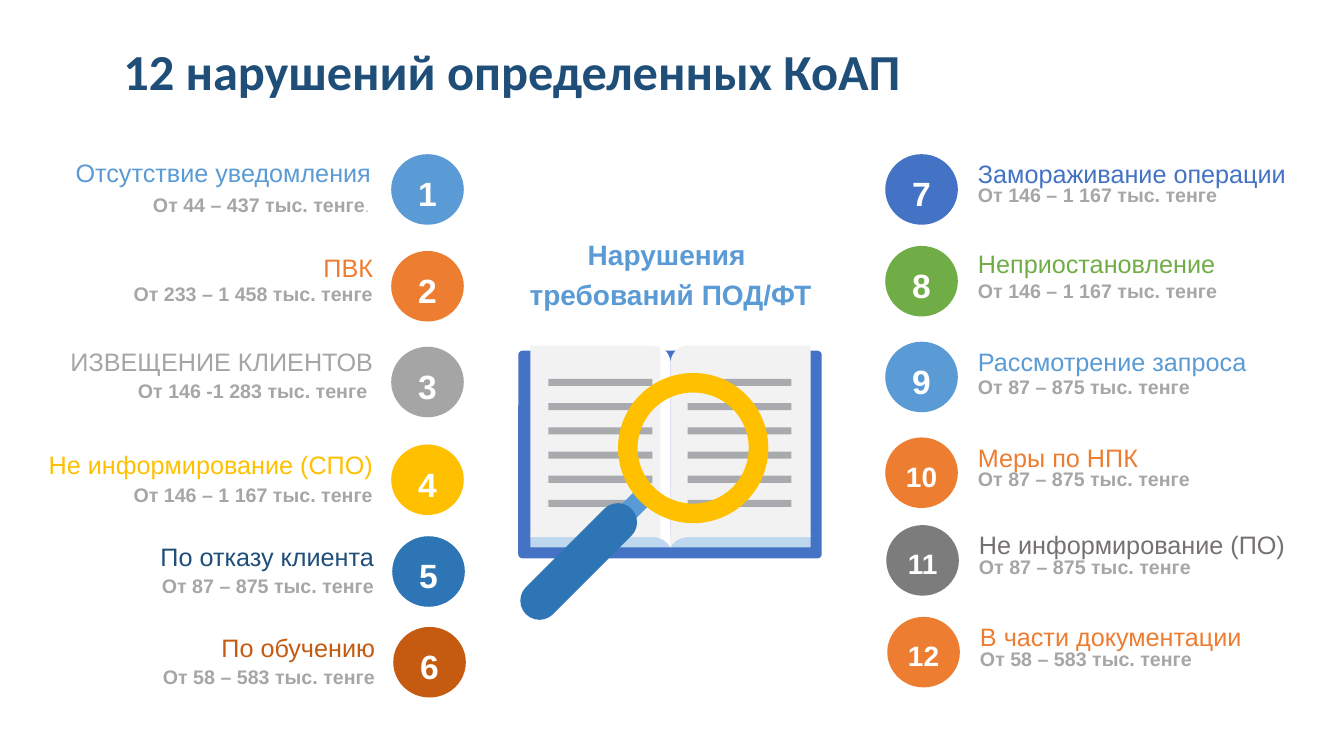
from pptx import Presentation, util as u
from pptx.dml.color import RGBColor
from pptx.enum import shapes, text

# Colours
WHITE, PAPER = RGBColor(255, 255, 255), RGBColor(0xF2, 0xF2, 0xF2)
INDIGO, SKY = RGBColor(0x44, 0x72, 0xC4), RGBColor(0x5B, 0x9B, 0xD5)
BLUE, NAVY = RGBColor(0x2E, 0x75, 0xB6), RGBColor(0x1F, 0x4E, 0x79)
PALE_BLUE, GREEN = RGBColor(0xBD, 0xD7, 0xEE), RGBColor(0x70, 0xAD, 0x47)
ORANGE, RUST = RGBColor(0xED, 0x7D, 0x31), RGBColor(0xC5, 0x5A, 0x11)
GOLD, GREY = RGBColor(0xFF, 0xC0, 0), RGBColor(0xA5, 0xA5, 0xA5)
AMOUNT_GREY, RULE_GREY = RGBColor(0xA6, 0xA6, 0xA6), RGBColor(0xA8, 0xAA, 0xAD)
STONE, DARK_GREY = RGBColor(0x76, 0x71, 0x71), RGBColor(0x7C, 0x7C, 0x7C)

# Content: violation, fine, text colour, badge colour, tops of badge, violation and fine
HEADING = "12 нарушений определенных КоАП"
CENTRE = ["Нарушения ", "требований ПОД/ФТ"]
LEFT = [
    ("Отсутствие уведомления", "От 44 – 437 тыс. тенге", SKY, SKY, 1.53, 1.5, 1.87),
    ("ПВК", "От 233 – 1 458 тыс. тенге", ORANGE, ORANGE, 2.49, 2.44, 2.75),
    ("ИЗВЕЩЕНИЕ КЛИЕНТОВ", "От 146 -1 283 тыс. тенге ", GREY, GREY, 3.44, 3.38, 3.71),
    ("Не информирование (СПО)", "От 146 – 1 167 тыс. тенге", GOLD, GOLD, 4.41, 4.4, 4.74),
    ("По отказу клиента", "От 87 – 875 тыс. тенге", NAVY, BLUE, 5.32, 5.31, 5.65),
    ("По обучению", "От 58 – 583 тыс. тенге", RUST, RUST, 6.22, 6.21, 6.55),
]
RIGHT = [
    ("Замораживание операции", "От 146 – 1 167 тыс. тенге", INDIGO, INDIGO, 1.53, 1.51, 1.77),
    ("Неприостановление", "От 146 – 1 167 тыс. тенге", GREEN, GREEN, 2.44, 2.4, 2.72),
    ("Рассмотрение запроса", "От 87 – 875 тыс. тенге", SKY, SKY, 3.39, 3.38, 3.67),
    ("Меры по НПК", "От 87 – 875 тыс. тенге", ORANGE, ORANGE, 4.34, 4.33, 4.59),
    ("Не информирование (ПО)", "От 87 – 875 тыс. тенге", STONE, DARK_GREY, 5.21, 5.19, 5.46),
    ("В части документации", "От 58 – 583 тыс. тенге", ORANGE, ORANGE, 6.12, 6.1, 6.37),
]
WIDTHS = {4: 3.7, 8: 3.63, 11: 3.63}  # wider violation boxes, by number
LEFT_EDGE, RIGHT_EDGE = 3.7, 9.7      # text edges beside the badges
BADGE_W, BADGE_H = 0.72, 0.7

prs = Presentation()
prs.slide_width, prs.slide_height = u.Inches(13.33), u.Inches(7.5)
slide = prs.slides.add_slide(prs.slide_layouts[6])


def paint(shape, colour):
    shape.shadow.inherit = False
    shape.fill.solid()
    shape.fill.fore_color.rgb = colour
    shape.line.fill.background()
    return shape


def add(kind, left, top, width, height, colour, adjust=None, turn=0):
    shape = slide.shapes.add_shape(kind, *map(u.Inches, (left, top, width, height)))
    if adjust is not None:
        shape.adjustments[0] = adjust
    shape.rotation = turn
    return paint(shape, colour)


def write(frame, lines, size, colour, bold=False, align="CENTER", font="Arial",
          spacing=1.2, before=0, tail=""):
    frame.word_wrap = True
    for i, line in enumerate(lines):
        para = frame.paragraphs[0] if i == 0 else frame.add_paragraph()
        para.alignment = getattr(text.PP_ALIGN, align)
        para.line_spacing = spacing
        para.space_before = u.Pt(before)
        runs = [(line, size, bold)] + ([(tail, 10, False)] if tail else [])
        for words, points, weight in runs:
            run = para.add_run()
            run.text = words
            run.font.name, run.font.size, run.font.bold = font, u.Pt(points), weight
            run.font.color.rgb = colour


def add_text(left, top, width, height, lines, size, colour, inset=0, **style):
    box = slide.shapes.add_textbox(*map(u.Inches, (left, top, width, height)))
    frame = box.text_frame
    if not inset:
        frame.margin_left = frame.margin_right = frame.margin_top = frame.margin_bottom = 0
    write(frame, lines, size, colour, **style)
    frame.auto_size = text.MSO_AUTO_SIZE.SHAPE_TO_FIT_TEXT


def curve(a, b, c, d, steps=10):
    """Points along a cubic Bezier curve."""
    return [tuple((1 - t) ** 3 * p + 3 * t * (1 - t) ** 2 * q + 3 * t * t * (1 - t) * r + t ** 3 * s
                  for p, q, r, s in zip(a, b, c, d))
            for t in (n / steps for n in range(steps + 1))]


def outline(points, colour):
    start, *rest = [(u.Inches(x), u.Inches(y)) for x, y in points]
    builder = slide.shapes.build_freeform(*start, scale=1.0)
    builder.add_line_segments(rest, close=True)
    paint(builder.convert_to_shape(), colour)


# Book: cover, page edges, two mirrored pages, fold
SPINE = 6.65
SHAPE = shapes.MSO_SHAPE
add(SHAPE.ROUNDED_RECTANGLE, 5.14, 3.48, 3.01, 2.06, INDIGO, 0.02)
add(SHAPE.RECTANGLE, 5.26, 5.31, 2.78, 0.12, PALE_BLUE)
for side in (1, -1):
    page = (curve((0, 3.59), (0.01, 3.5), (0.08, 3.43), (0.17, 3.43))
            + [(1.39, 3.43), (1.39, 5.33)]
            + curve((0.17, 5.33), (0.1, 5.33), (0.03, 5.37), (0, 5.43)))
    outline([(SPINE + side * x, y) for x, y in page], PAPER)
outline(curve((SPINE, 3.59), (6.64, 3.52), (6.6, 3.47), (6.55, 3.44))
        + curve((6.55, 5.34), (6.59, 5.36), (6.63, 5.39), (SPINE, 5.43)), WHITE)

# Lines of print
for column in (6.82, 5.44):
    for row in range(6):
        add(SHAPE.RECTANGLE, column, 3.76 + row * 0.24, 1.03, 0.07, RULE_GREY)

# Magnifying glass: shaft, grip, ring
for x, y, length, thickness, colour in [(5.88, 5.43, 1.7, 0.2, SKY), (5.74, 5.57, 1.48, 0.38, BLUE)]:
    add(SHAPE.ROUNDED_RECTANGLE, x - length / 2, y - thickness / 2, length, thickness,
        colour, 0.5, -45)
add(SHAPE.DONUT, 6.13, 3.7, 1.49, 1.49, GOLD, 0.13)

# Headings
add_text(0.6, 0.35, 8.96, 0.71, [HEADING], 36, NAVY, inset=1, bold=True,
         font="Calibri", spacing=1.0)
add_text(5.14, 2.29, 3.02, 0.77, CENTRE, 20, SKY, bold=True)

# Violations with numbered badges
for rows, first, badge_x, align in [(LEFT, 1, 3.88, "RIGHT"), (RIGHT, 7, 8.78, "LEFT")]:
    for i, (violation, fine, colour, badge_colour, badge_y, name_y, fine_y) in enumerate(rows):
        number = first + i
        drift = max(0, i - 3) * 0.01
        on_left = align == "RIGHT"
        width = 3.02 if on_left else 3.06
        name_w = WIDTHS.get(number, width)
        edge = (LEFT_EDGE if on_left else RIGHT_EDGE) + drift
        name_edge, fine_edge = (edge - 0.02, edge - 0.04) if number == 1 else (edge, edge)
        add_text(name_edge - on_left * name_w, name_y, name_w, 0.33, [violation], 18, colour,
                 align=align)
        add_text(fine_edge - on_left * width, fine_y, width, 0.26, [fine], 14, AMOUNT_GREY,
                 bold=True, align=align, before=2.8, tail="." if number == 1 else "")
        badge = add(SHAPE.OVAL, badge_x + drift, badge_y, BADGE_W, BADGE_H, badge_colour)
        badge.text_frame.vertical_anchor = text.MSO_ANCHOR.MIDDLE
        write(badge.text_frame, [str(number)], 24 if number < 10 else 20, WHITE, bold=True)

prs.save("out.pptx")
